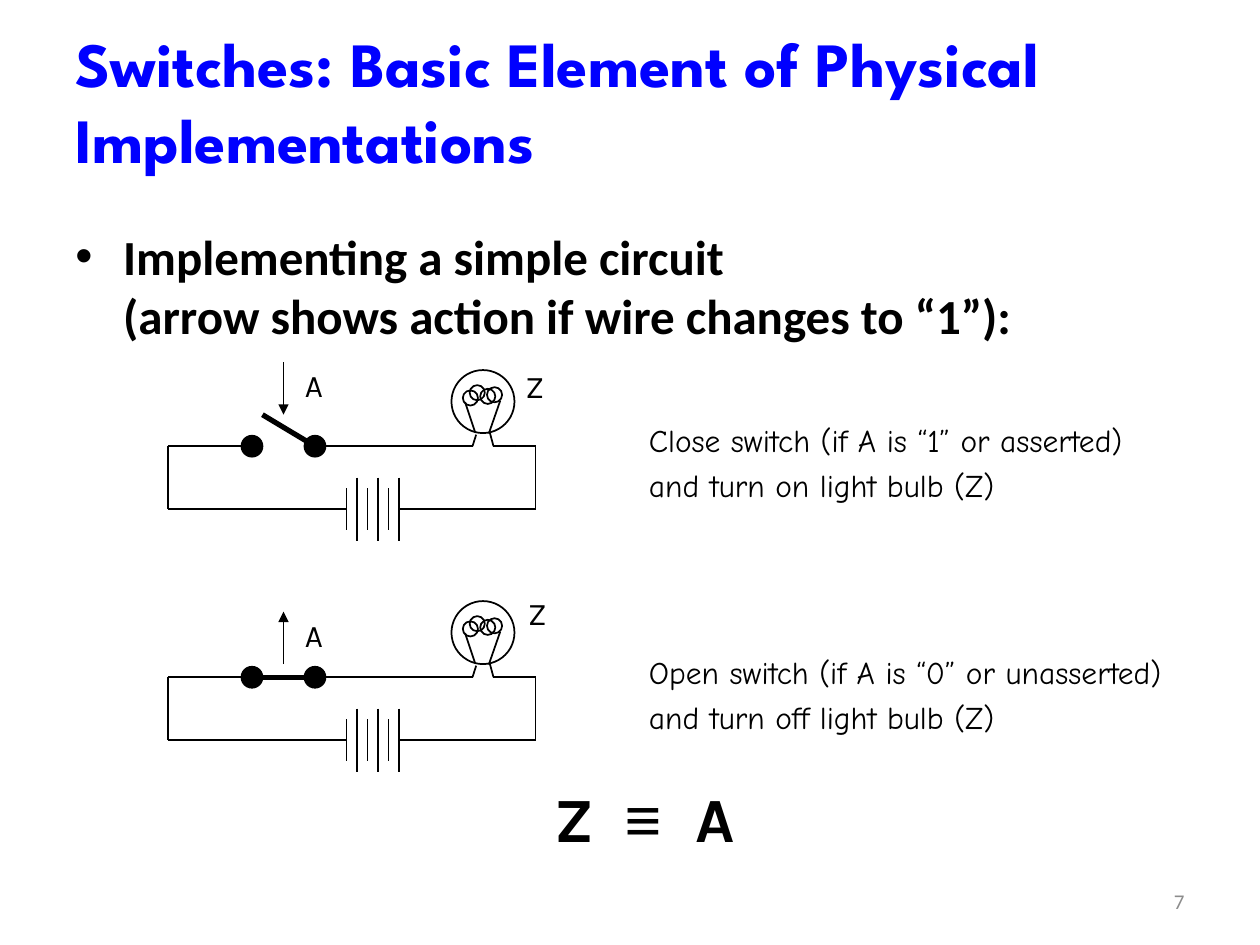
from lxml import etree
from pptx import Presentation, util as u
from pptx.dml.color import RGBColor
from pptx.enum import shapes, text
from pptx.oxml import ns

UNIT = 1 / 12
BLACK = "000000"
TIGHT = (0.02, 0.03)
ROOMY = (0.1, 0.05)


def color(value):
    """Turn a hex string into a colour."""
    return RGBColor.from_string(value)


def set_attrs(obj, attrs):
    """Set every attribute named in a dict."""
    for name, value in attrs.items():
        setattr(obj, name, value)


def format_run(r, font, size, bold=False, fill=BLACK):
    """Give a run its font, size, weight and colour."""
    set_attrs(r.font, {"name": font, "size": u.Pt(size), "bold": bold})
    r.font.color.rgb = color(fill)


def sub(parent, tag, **attrs):
    """Append a drawing element with attributes."""
    return etree.SubElement(parent, ns.qn(tag), attrs)


def fill_text(sp, content, style, inset=ROOMY, para=None, anchor="TOP"):
    """Write one paragraph into a shape and format it."""
    tf = sp.text_frame
    x, y = (u.Inches(v) for v in inset)
    set_attrs(tf, {"word_wrap": True, "margin_left": x, "margin_right": x,
                   "margin_top": y, "margin_bottom": y,
                   "vertical_anchor": getattr(text.MSO_ANCHOR, anchor)})
    p = tf.paragraphs[0]
    p.text = content
    set_attrs(p, para or {})
    for r in p.runs:
        format_run(r, **style)
    return p


def add_text(s, box, content, style, **options):
    """Add a text box and return its paragraph."""
    sp = s.shapes.add_textbox(*(u.Inches(v) for v in box))
    return fill_text(sp, content, style, **options)


def add_line(group, start, end, width=1, arrow=False):
    """Draw a line between two grid points."""
    ends = [u.Inches(v * UNIT) for v in (*start, *end)]
    c = group.shapes.add_connector(shapes.MSO_CONNECTOR.STRAIGHT, *ends)
    c.line.width = u.Pt(width)
    c.line.color.rgb = color(BLACK)
    if arrow:
        sub(c.line._get_or_add_ln(), "a:tailEnd", type="triangle")
    sub(c._element.spPr, "a:effectLst")


def add_circle(group, center, radius, fill=None):
    """Draw a circle around a grid point."""
    x, y = center
    box = [u.Inches(v * UNIT) for v in (x - radius, y - radius, 2 * radius, 2 * radius)]
    sp = group.shapes.add_shape(shapes.MSO_SHAPE.OVAL, *box)
    sp.shadow.inherit = False
    sp.line.width = u.Pt(1)
    sp.line.color.rgb = color(BLACK)
    if fill:
        sp.fill.solid()
        sp.fill.fore_color.rgb = color(fill)
    else:
        sp.fill.background()


def add_wires(s, top):
    """Draw the loop between switch, bulb and battery."""
    low = top + 6
    path = [[(30, top), (45, top)],
            [(47, top), (51, top), (51, low), (38, low)],
            [(33, low), (16, low), (16, top), (24, top)]]
    for points in path:
        for start, end in zip(points, points[1:]):
            add_line(s, start, end)


def add_bulb(s, top):
    """Draw the bulb with its filament coils and leads."""
    g = s.shapes.add_group_shape()
    add_circle(g, (46, top - 4.25), 3, "FFFFFF")
    for x, y in ((44.8, 4.6), (45.45, 5.1), (46.45, 4.75), (47.1, 4.9)):
        add_circle(g, (x, top - y), 0.72)
    for x1, y1, x2, y2 in ((44.3, 4.2, 45.25, 1.35), (47.65, 4.35, 46.55, 1.2),
                           (45.35, 1.1, 45, 0), (46.65, 1.3, 47, 0)):
        add_line(g, (x1, top - y1), (x2, top - y2))


def add_switch(s, top, tip):
    """Draw the lever and the two contacts."""
    g = s.shapes.add_group_shape()
    add_line(g, (30, top), tip, width=3)
    for x in (24, 30):
        add_circle(g, (x, top), 1, BLACK)


def add_battery(s, middle):
    """Draw the alternating short and long plates."""
    g = s.shapes.add_group_shape()
    for i in range(6):
        half = 3 if i % 2 else 2
        add_line(g, (33 + i, middle - half), (33 + i, middle + half))


def add_circuit(s, top, tip, arrow, z_at, note_top, note):
    """Draw one complete circuit with its labels and note."""
    add_wires(s, top)
    add_bulb(s, top)
    add_switch(s, top, tip)
    add_battery(s, top + 6)
    add_line(s, (27, arrow[0]), (27, arrow[1]), arrow=True)
    spacing = {"line_spacing": u.Pt(26)}
    label_top = min(arrow) * UNIT - 0.06
    for name, (x, y) in {"A": (2.4, label_top), "Z": z_at}.items():
        add_text(s, (x, y, 0.6, 0.49), name, {"font": "Karla", "size": 18},
                 inset=TIGHT, para=spacing)
    add_text(s, (5.13, note_top, 4.45, 1.12), note, {"font": "Comic Neue", "size": 18},
             inset=TIGHT, para={**spacing, "space_before": u.Pt(11)})


def add_title(s, content):
    """Place and format the title placeholder."""
    sp = s.shapes.title
    box = dict(left=0.5, top=0.17, width=9, height=1.25)
    set_attrs(sp, {k: u.Inches(v) for k, v in box.items()})
    fill_text(sp, content,
              {"font": "League Spartan", "size": 36, "bold": True, "fill": "0000FF"},
              para={"alignment": text.PP_ALIGN.LEFT}, anchor="MIDDLE")


def add_bullet(s, content):
    """Add the bulleted statement."""
    p = add_text(s, (0.5, 1.75, 9, 1.1), content,
                 {"font": "Calibri", "size": 28, "bold": True},
                 para={"space_before": u.Pt(5.6)})
    pPr = p._p.get_or_add_pPr()
    indent = u.Inches(0.38)
    pPr.set("marL", str(indent))
    pPr.set("indent", str(-indent))
    sub(pPr, "a:buFont", typeface="Arial")
    sub(pPr, "a:buChar", char="•")


def add_equation(s):
    """Add the equivalence with evenly tabbed terms."""
    style = {"font": "Karla", "size": 36, "bold": True}
    p = add_text(s, (4.3, 6.38, 1.73, 0.51), "Z\t", style,
                 para={"line_spacing": u.Pt(26), "space_before": u.Pt(11)})
    for content, font in (("≡", "Arial"), ("\tA", "Karla")):
        r = p.add_run()
        r.text = content
        format_run(r, **{**style, "font": font})
    tabs = sub(p._p.get_or_add_pPr(), "a:tabLst")
    for i in (1, 2):
        sub(tabs, "a:tab", pos=str(u.Inches(0.56 * i)), algn="l")


def main():
    """Build and save the slide."""
    prs = Presentation()
    set_attrs(prs, {"slide_width": u.Inches(10), "slide_height": u.Inches(7.5)})
    s = prs.slides.add_slide(prs.slide_layouts[5])
    add_title(s, "Switches: Basic Element of Physical Implementations")
    add_bullet(s, "Implementing a simple circuit \v(arrow shows action if wire changes to “1”):")
    add_circuit(s, 42.5, (25, 39.5), (34.5, 39.5), (4.15, 2.82), 3.25,
                "Close switch (if A is “1” or asserted)\vand turn on light bulb (Z)")
    add_circuit(s, 64.5, (24, 64.5), (63.25, 58.25), (4.17, 4.62), 5.09,
                "Open switch (if A is “0” or unasserted)\vand turn off light bulb (Z)")
    add_equation(s)
    add_text(s, (7.17, 6.95, 2.33, 0.4), "7",
             {"font": "Calibri", "size": 12, "fill": "8C8C8C"},
             para={"alignment": text.PP_ALIGN.RIGHT}, anchor="MIDDLE")
    prs.save("out.pptx")


if __name__ == "__main__":
    main()
